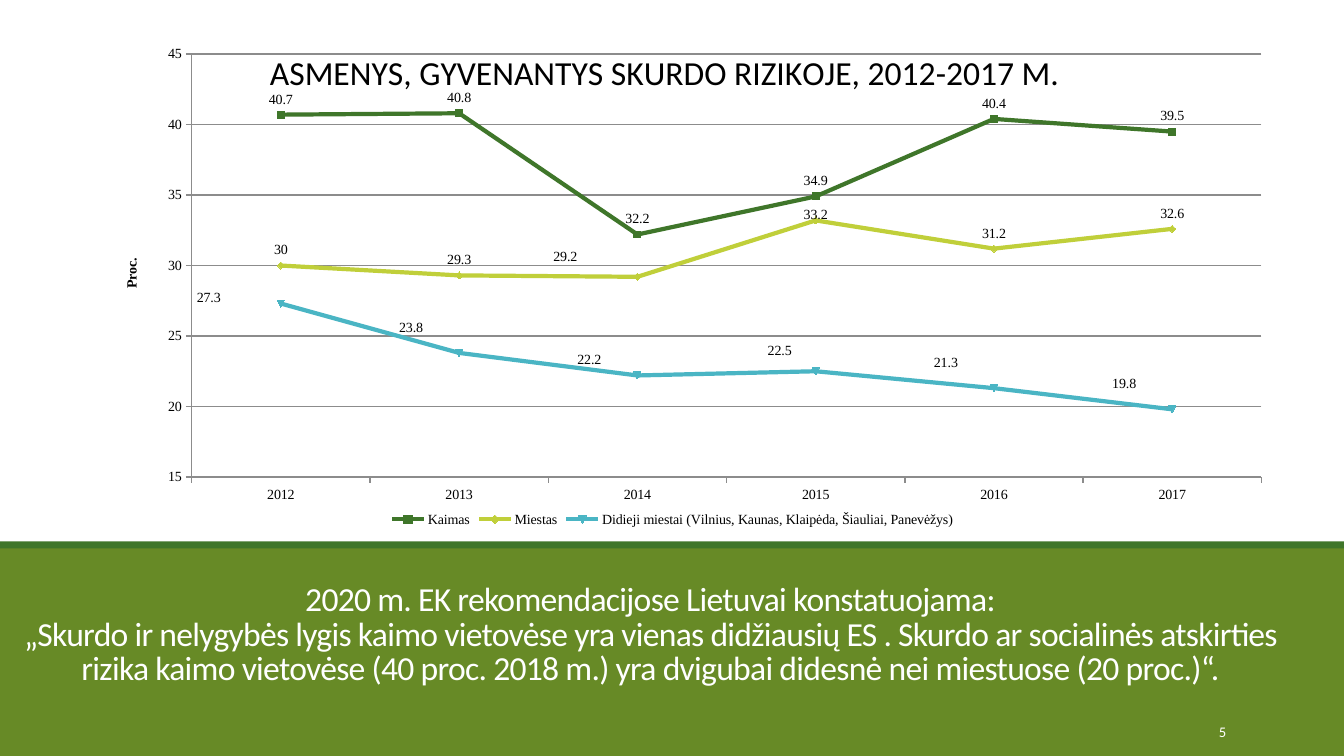
"""Slide with a line chart of poverty risk in Lithuania, 2012-2017, above a green statement band."""
from lxml.etree import SubElement
from pptx import Presentation
from pptx.chart.data import CategoryChartData
from pptx.dml.color import RGBColor
from pptx.enum.chart import XL_CHART_TYPE, XL_LABEL_POSITION, XL_LEGEND_POSITION, XL_TICK_MARK
from pptx.enum.shapes import MSO_SHAPE
from pptx.enum.text import MSO_ANCHOR, MSO_AUTO_SIZE, PP_ALIGN
from pptx.oxml import parse_xml
from pptx.oxml.ns import nsdecls, qn
from pptx.util import Inches, Pt

THEME = {
    "white": RGBColor.from_string("FFFFFF"),
    "black": RGBColor.from_string("000000"),
    "band": RGBColor.from_string("678A26"),
    "stripe": RGBColor.from_string("3F762A"),
    "grid": RGBColor.from_string("8C8C8C"),
    "lines": [RGBColor.from_string(code) for code in ("3F762A", "C0CF3A", "4AB5C4")],
    "heading": Pt(24),
    "label": Pt(10),
    "number": Pt(10.5),
    "sans": "Calibri",
    "serif": "Times New Roman",
}


def set_font(font, size, name, color, bold=False):
    """Apply size, typeface, colour and weight to a font."""
    for attribute, value in {"size": size, "name": name, "bold": bold}.items():
        setattr(font, attribute, value)
    font.color.rgb = color


def set_layout(parent, index, **settings):
    """Give a chart part a manual layout as its child at the index."""
    for previous in parent.findall(qn("c:layout")):
        parent.remove(previous)
    layout = parse_xml(f"<c:layout {nsdecls('c')}><c:manualLayout/></c:layout>")
    for tag, value in settings.items():
        SubElement(layout[0], qn(f"c:{tag}")).set("val", str(value))
    parent.insert(index, layout)


prs = Presentation()
prs.slide_width, prs.slide_height = Inches(13.33), Inches(7.5)
slide = prs.slides.add_slide(prs.slide_layouts[5])

for top, height, color in ((5.42, 2.08, "band"), (5.37, 0.07, "stripe")):
    strip = slide.shapes.add_shape(MSO_SHAPE.RECTANGLE, 0, Inches(top), prs.slide_width, Inches(height))
    strip.shadow.inherit = False
    strip.fill.solid()
    strip.fill.fore_color.rgb = THEME[color]
    strip.line.fill.background()

statement = slide.shapes.title
slide.shapes.element.append(statement.element)
box = {"left": 0, "top": 5.74, "width": 12.9, "height": 1.13}
for attribute, value in box.items():
    setattr(statement, attribute, Inches(value))
statement.text_frame.text = (
    "2020 m. EK rekomendacijose Lietuvai konstatuojama:\v"
    "„Skurdo ir nelygybės lygis kaimo vietovėse yra vienas didžiausių ES . "
    "Skurdo ar socialinės atskirties rizika kaimo vietovėse (40 proc. 2018 m.) "
    "yra dvigubai didesnė nei miestuose (20 proc.)“."
)
frame_format = {"word_wrap": True, "auto_size": MSO_AUTO_SIZE.NONE, "vertical_anchor": MSO_ANCHOR.BOTTOM}
for attribute, value in frame_format.items():
    setattr(statement.text_frame, attribute, value)
sentence = statement.text_frame.paragraphs[0]
sentence.alignment, sentence.line_spacing = PP_ALIGN.CENTER, 0.85
for run in sentence.runs:
    set_font(run.font, THEME["heading"], THEME["sans"], THEME["white"])
for properties in statement.element.iter(qn("a:rPr")):
    properties.set("spc", "-50")

page = slide.shapes.add_textbox(Inches(10.83), Inches(7.06), Inches(1.43), Inches(0.4)).text_frame
page.word_wrap, page.vertical_anchor = True, MSO_ANCHOR.MIDDLE
page.text = "5"
number = page.paragraphs[0]
number.alignment, number.space_after = PP_ALIGN.RIGHT, Pt(6)
set_font(number.runs[0].font, THEME["number"], THEME["sans"], THEME["white"])

risk = CategoryChartData(number_format="General")
risk.categories = ["2012", "2013", "2014", "2015", "2016", "2017"]
risk.add_series("Kaimas", (40.7, 40.8, 32.2, 34.9, 40.4, 39.5))
risk.add_series("Miestas", (30, 29.3, 29.2, 33.2, 31.2, 32.6))
risk.add_series(
    "Didieji miestai (Vilnius, Kaunas, Klaipėda, Šiauliai, Panevėžys)",
    (27.3, 23.8, 22.2, 22.5, 21.3, 19.8),
)
chart = slide.shapes.add_chart(
    XL_CHART_TYPE.LINE_MARKERS, Inches(0.71), Inches(0.39), Inches(11.92), Inches(4.88), risk
).chart
set_font(chart.font, THEME["label"], THEME["serif"], THEME["black"])

chart.has_title = True
chart.chart_title.text_frame.text = "ASMENYS, GYVENANTYS SKURDO RIZIKOJE, 2012-2017 M."
heading = chart.chart_title.text_frame.paragraphs[0].runs[0]
set_font(heading.font, THEME["heading"], THEME["sans"], THEME["black"])
chart_title = chart.element.xpath("c:chart/c:title")[0]
chart_title.find(qn("c:overlay")).set("val", "1")
set_layout(chart_title, 1, xMode="edge", yMode="edge", x=0.16, y=0.01)
set_layout(
    chart.element.xpath("c:chart/c:plotArea")[0], 0,
    layoutTarget="inner", xMode="edge", yMode="edge", x=0.1, y=0.03, w=0.89, h=0.86,
)

chart.has_legend = True
chart.legend.position, chart.legend.include_in_layout = XL_LEGEND_POSITION.BOTTOM, False
set_font(chart.legend.font, THEME["label"], THEME["serif"], THEME["black"])

years, percent = chart.category_axis, chart.value_axis
for attribute, value in {"minimum_scale": 15, "maximum_scale": 45, "major_unit": 5}.items():
    setattr(percent, attribute, value)
percent.has_major_gridlines = True
for axis in (years, percent):
    axis.major_tick_mark, axis.minor_tick_mark = XL_TICK_MARK.OUTSIDE, XL_TICK_MARK.NONE
    set_font(axis.tick_labels.font, THEME["label"], THEME["serif"], THEME["black"])
for rule in (years.format.line, percent.format.line, percent.major_gridlines.format.line):
    rule.color.rgb, rule.width = THEME["grid"], Pt(1)
percent.axis_title.text_frame.text = "Proc."
unit = percent.axis_title.text_frame.paragraphs[0].runs[0]
set_font(unit.font, THEME["label"], THEME["serif"], THEME["black"], bold=True)
set_layout(chart.element.xpath(".//c:valAx/c:title")[0], 1, xMode="edge", yMode="edge", x=0.04, y=0.44)

label_shifts = [
    {},
    {2: (-0.06, -0.01), 3: (0, 0.02)},
    {0: (-0.06, 0.02), 1: (-0.04, -0.02), 2: (-0.04, 0), 3: (-0.03, -0.01), 4: (-0.04, -0.02), 5: (-0.04, -0.02)},
]
plot = chart.plots[0]
plot.vary_by_categories = False
for series, color, shifts in zip(plot.series, THEME["lines"], label_shifts):
    series.smooth = False
    series.format.line.color.rgb, series.format.line.width = color, Pt(3)
    series.marker.size = 5
    series.marker.format.fill.solid()
    series.marker.format.fill.fore_color.rgb = color
    series.marker.format.line.color.rgb = color
    series.data_labels.show_value = True
    series.data_labels.position = XL_LABEL_POSITION.ABOVE
    set_font(series.data_labels.font, THEME["label"], THEME["serif"], THEME["black"])
    for point in shifts:
        series.points[point].data_label.position = XL_LABEL_POSITION.ABOVE

shifted_labels = chart.element.xpath(".//c:dLbl")
all_shifts = [shift for shifts in label_shifts for shift in shifts.values()]
for label, (x, y) in zip(shifted_labels, all_shifts):
    set_layout(label, 1, x=x, y=y)

leader_extension = (
    f"<c:extLst {nsdecls('c')}><c:ext uri='{{CE6537A1-D6FC-4f65-9D91-7224C49458BB}}' "
    "xmlns:c15='http://schemas.microsoft.com/office/drawing/2012/chart'>"
    "<c15:showLeaderLines val='0'/></c:ext></c:extLst>"
)
for labels in chart.element.xpath(".//c:ser/c:dLbls"):
    for leader in labels.findall(qn("c:showLeaderLines")):
        leader.set("val", "0")
    labels.append(parse_xml(leader_extension))

prs.save("out.pptx")
